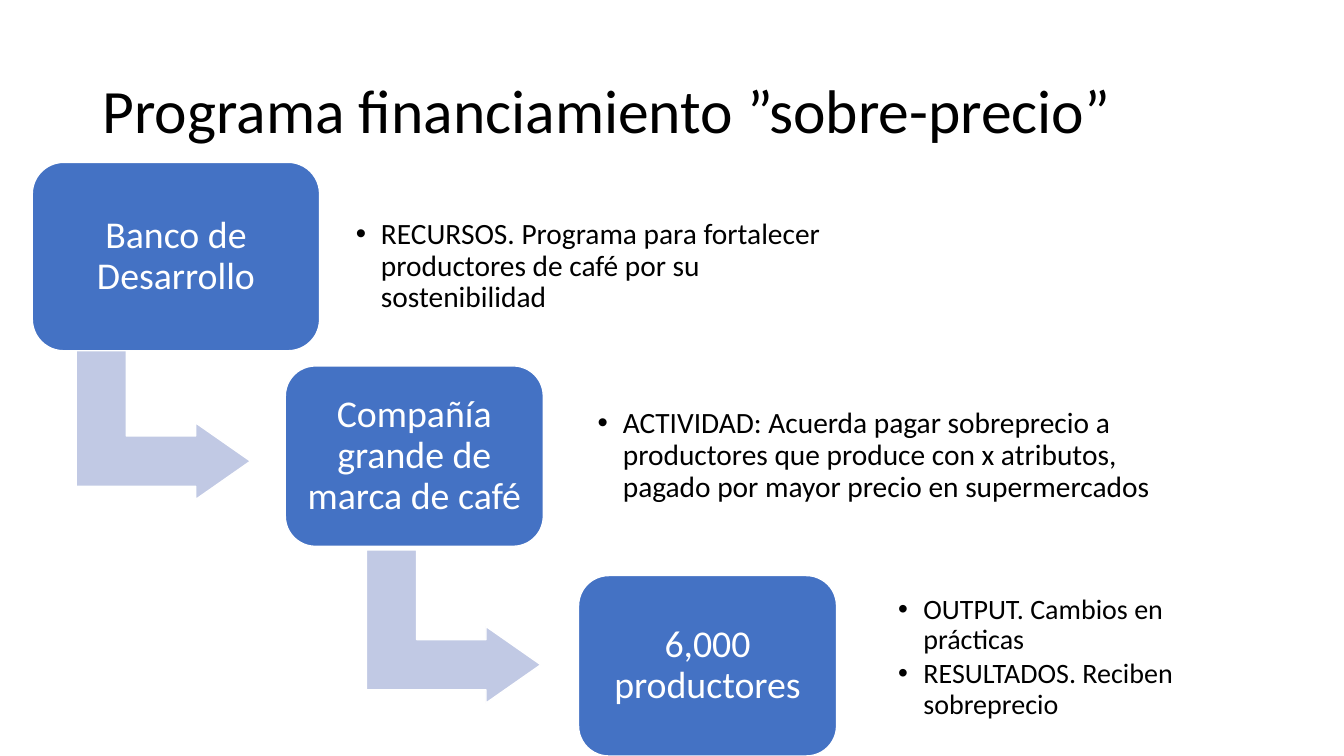
"""Build a slide with a three-step descending process on coffee price premiums."""
from lxml.etree import SubElement
from pptx import Presentation
from pptx.dml.color import RGBColor
from pptx.enum.shapes import MSO_SHAPE
from pptx.enum.text import MSO_ANCHOR, PP_ALIGN
from pptx.oxml.ns import qn
from pptx.util import Inches, Pt

COLORS = {"box": "4472C4", "arrow": "C1C9E4", "white": "FFFFFF", "black": "000000"}

presentation = Presentation()
presentation.slide_width = Inches(13.333)
presentation.slide_height = Inches(7.5)
slide = presentation.slides.add_slide(presentation.slide_layouts[6])
column = presentation.slide_width / 100
row = presentation.slide_height / 100


def place(left, top, width, height, preset=None, fill=None, adjustments=()):
    frame = [int(left * column), int(top * row), int(width * column), int(height * row)]
    if preset is None:
        return slide.shapes.add_textbox(*frame)
    shape = slide.shapes.add_shape(preset, *frame)
    shape.shadow.inherit = False
    shape.fill.solid()
    shape.fill.fore_color.rgb = RGBColor.from_string(COLORS[fill])
    shape.line.color.rgb = RGBColor.from_string(COLORS["white"])
    shape.line.width = Pt(1)
    for index, value in enumerate(adjustments):
        shape.adjustments[index] = value
    return shape


def write(shape, lines, size, color, margin, align=PP_ALIGN.LEFT, bullet=False):
    text_frame = shape.text_frame
    text_frame.word_wrap = True
    text_frame.vertical_anchor = MSO_ANCHOR.MIDDLE
    text_frame.margin_left = text_frame.margin_right = Inches(margin)
    text_frame.margin_top = text_frame.margin_bottom = Inches(margin)
    for index, line in enumerate(lines):
        paragraph = text_frame.paragraphs[0] if index == 0 else text_frame.add_paragraph()
        paragraph.alignment = align
        paragraph.line_spacing = 0.9
        if index > 0:
            paragraph.space_before = Pt(size * 0.15)
        if bullet:
            properties = paragraph._p.get_or_add_pPr()
            properties.set("marL", str(Inches(0.25)))
            properties.set("indent", str(-Inches(0.25)))
            SubElement(properties, qn("a:buFont"), typeface="Arial")
            SubElement(properties, qn("a:buChar"), char="•")
        run = paragraph.add_run()
        run.text = line
        run.font.name = "Calibri"
        run.font.size = Pt(size)
        run.font.color.rgb = RGBColor.from_string(COLORS[color])


title = place(6.9, 5.33, 86.25, 19.33)
write(title, ["Programa financiamiento ”sobre-precio”"], 44, "black", 0.1)

steps = [
    ("Banco de Desarrollo", (2.4, 21.47, 21.38, 24.93), (6.45, 44.4),
     ["RECURSOS. Programa para fortalecer productores de café por su sostenibilidad"],
     (25.65, 25.07, 39.9, 20.4), 21, 0.11),
    ("Compañía grande de marca de café", (21.23, 48.4, 19.2, 23.87), (28.05, 71.33),
     ["ACTIVIDAD: Acuerda pagar sobreprecio a productores que produce con x atributos, "
      "pagado por mayor precio en supermercados"],
     (43.65, 50, 43.43, 20.67), 21, 0.11),
    ("6,000 productores", (43.05, 76.13, 19.2, 23.87), None,
     ["OUTPUT. Cambios en prácticas", "RESULTADOS. Reciben sobreprecio"],
     (66.23, 77.33, 26.85, 19.33), 20, 0.08),
]

for name, box_frame, arrow_corner, details, detail_frame, size, margin in steps:
    if arrow_corner:
        arrow = place(*arrow_corner, 11.4, 23.07, MSO_SHAPE.BENT_UP_ARROW, "arrow",
                      (0.328, 0.25, 0.358))
        arrow.rotation = 90
    box = place(*box_frame, MSO_SHAPE.ROUNDED_RECTANGLE, "box", (0.167,))
    write(box, [name], 27, "white", 0.11, PP_ALIGN.CENTER)
    write(place(*detail_frame), details, size, "black", margin, bullet=True)

presentation.save("out.pptx")
